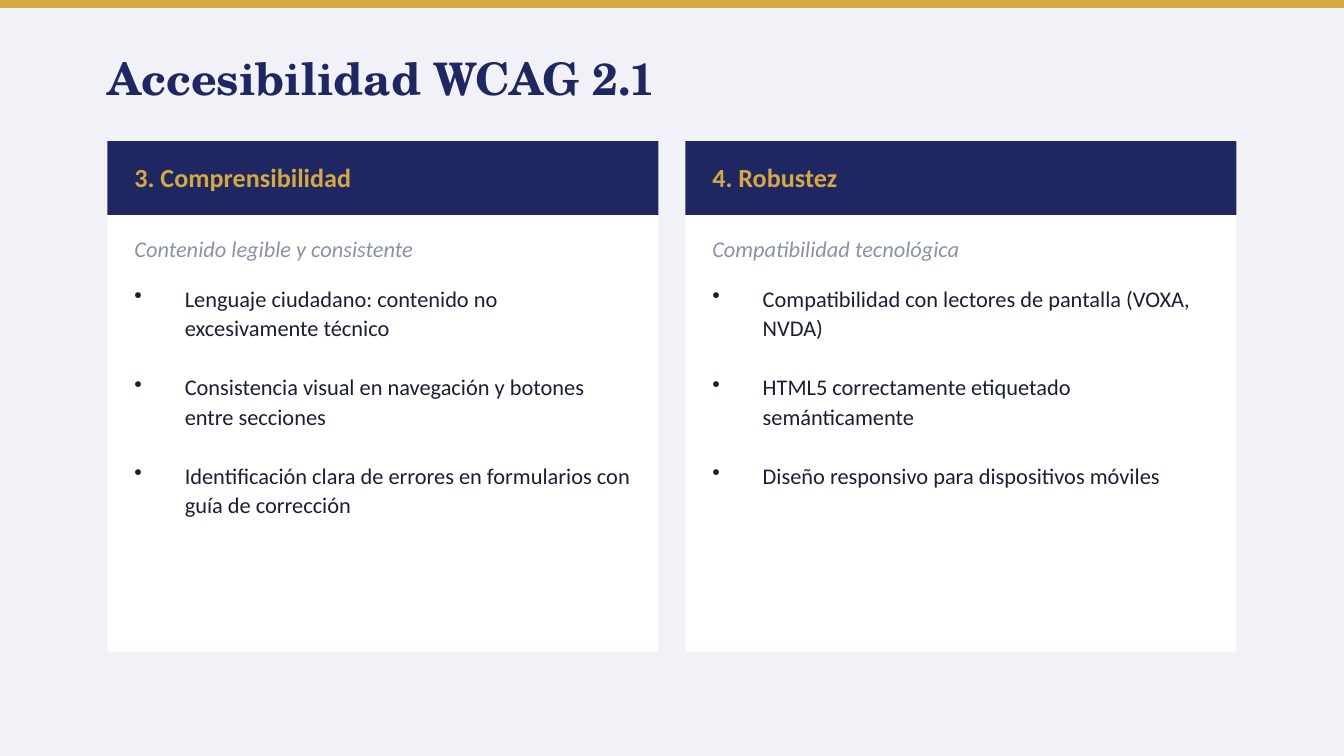
import pptx
import pptx.dml.color
import pptx.enum.shapes
import pptx.enum.text
import pptx.oxml.ns
import pptx.util
from lxml import etree

Pt = pptx.util.Pt
RGBColor = pptx.dml.color.RGBColor
Anchor = pptx.enum.text.MSO_ANCHOR

NAVY = RGBColor(0x1E, 0x27, 0x61)
GOLD = RGBColor(0xD4, 0xA8, 0x43)
PALE = RGBColor(0xF0, 0xF2, 0xF7)
WHITE = RGBColor(0xFF, 0xFF, 0xFF)
GREY = RGBColor(0x8B, 0x92, 0xA8)
INK = RGBColor(0x1A, 0x1F, 0x36)

LEFT, TOP = 57.6, 75.6
WIDTH, HEIGHT, GAP = 295.2, 273.6, 14.4
PAD = 14.4
INDENT = 27

CARDS = [
    ("3. Comprensibilidad", "Contenido legible y consistente", [
        "Lenguaje ciudadano: contenido no excesivamente técnico",
        "Consistencia visual en navegación y botones entre secciones",
        "Identificación clara de errores en formularios con guía de corrección",
    ]),
    ("4. Robustez", "Compatibilidad tecnológica", [
        "Compatibilidad con lectores de pantalla (VOXA, NVDA)",
        "HTML5 correctamente etiquetado semánticamente",
        "Diseño responsivo para dispositivos móviles",
    ]),
]

deck = pptx.Presentation()
deck.slide_width, deck.slide_height = Pt(720), Pt(405)
slide = deck.slides.add_slide(deck.slide_layouts[6])
slide.background.fill.solid()
slide.background.fill.fore_color.rgb = PALE


def add_block(x, y, w, h, color):
    block = slide.shapes.add_shape(
        pptx.enum.shapes.MSO_SHAPE.RECTANGLE, Pt(x), Pt(y), Pt(w), Pt(h))
    block.shadow.inherit = False
    block.fill.solid()
    block.fill.fore_color.rgb = color
    block.line.fill.background()


def add_text(x, y, w, h, lines, size, color, name="Calibri",
             bold=False, italic=False, anchor=Anchor.MIDDLE):
    """Add a text box without margins, one paragraph per line; return its paragraphs."""
    frame = slide.shapes.add_textbox(Pt(x), Pt(y), Pt(w), Pt(h)).text_frame
    frame.word_wrap = True
    frame.vertical_anchor = anchor
    frame.margin_left = frame.margin_right = 0
    frame.margin_top = frame.margin_bottom = 0
    frame.text = "\n".join(lines)
    for para in frame.paragraphs:
        for run in para.runs:
            font = run.font
            font.name, font.size = name, Pt(size)
            font.bold, font.italic = bold, italic
            font.color.rgb = color
    return frame.paragraphs


add_block(0, 0, 720, 4.32, GOLD)
add_text(LEFT, 21.6, 576, 39.6, ["Accesibilidad WCAG 2.1"], 24, NAVY,
         name="TeX Gyre Schola", bold=True)

for col, (title, intro, points) in enumerate(CARDS):
    x = LEFT + col * (WIDTH + GAP)
    inner = WIDTH - 2 * PAD
    add_block(x, TOP, WIDTH, HEIGHT, WHITE)
    add_block(x, TOP, WIDTH, 39.6, NAVY)
    add_text(x + PAD, 77, 252, 36, [title], 14, GOLD, bold=True)
    add_text(x + PAD, 122.4, inner, 21.6, [intro], 12, GREY, italic=True)
    paras = add_text(x + PAD, 151.2, inner, 180, points, 12, INK,
                     anchor=Anchor.TOP)
    for row, para in enumerate(paras):
        para.line_spacing = 1.1
        if row:
            para.space_before = Pt(15.8)
        props = para._p.get_or_add_pPr()
        props.set("marL", str(Pt(INDENT)))
        props.set("indent", str(-Pt(INDENT)))
        mark = etree.SubElement(props, pptx.oxml.ns.qn("a:buChar"))
        mark.set("char", "•")

deck.save("out.pptx")
